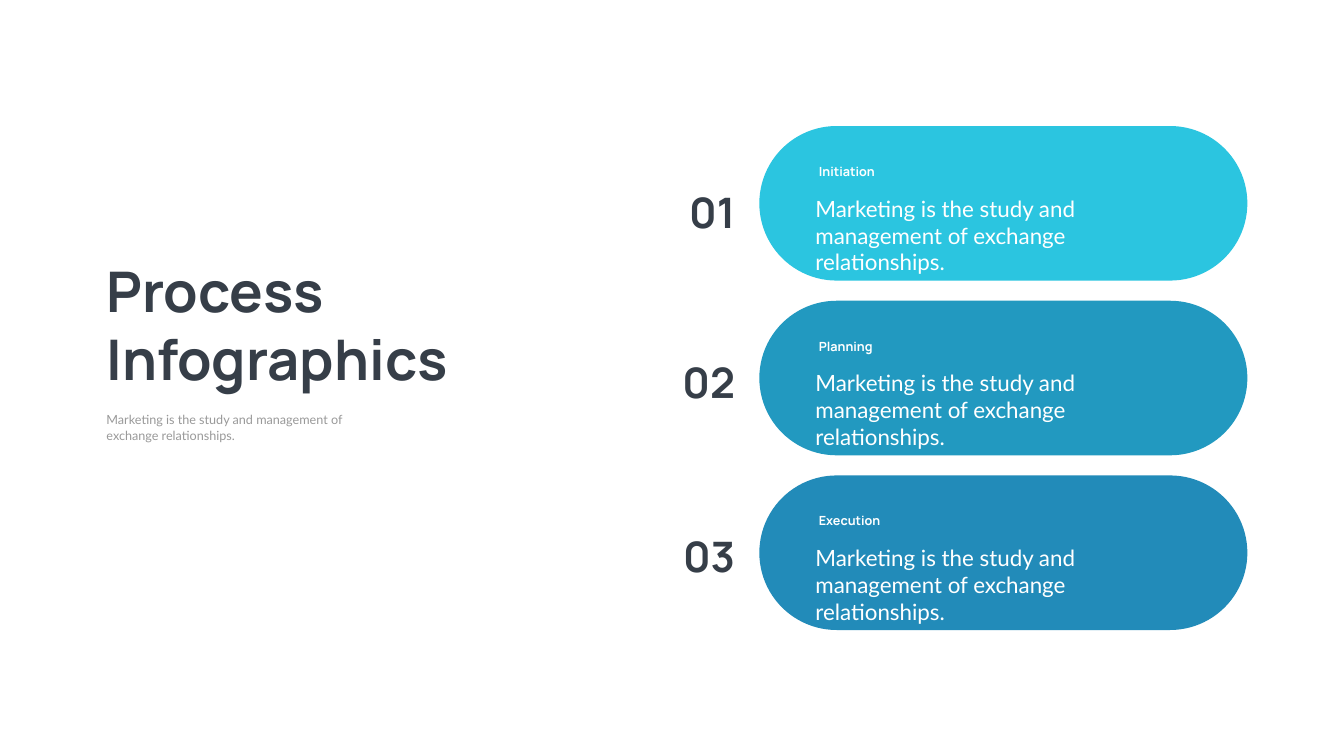
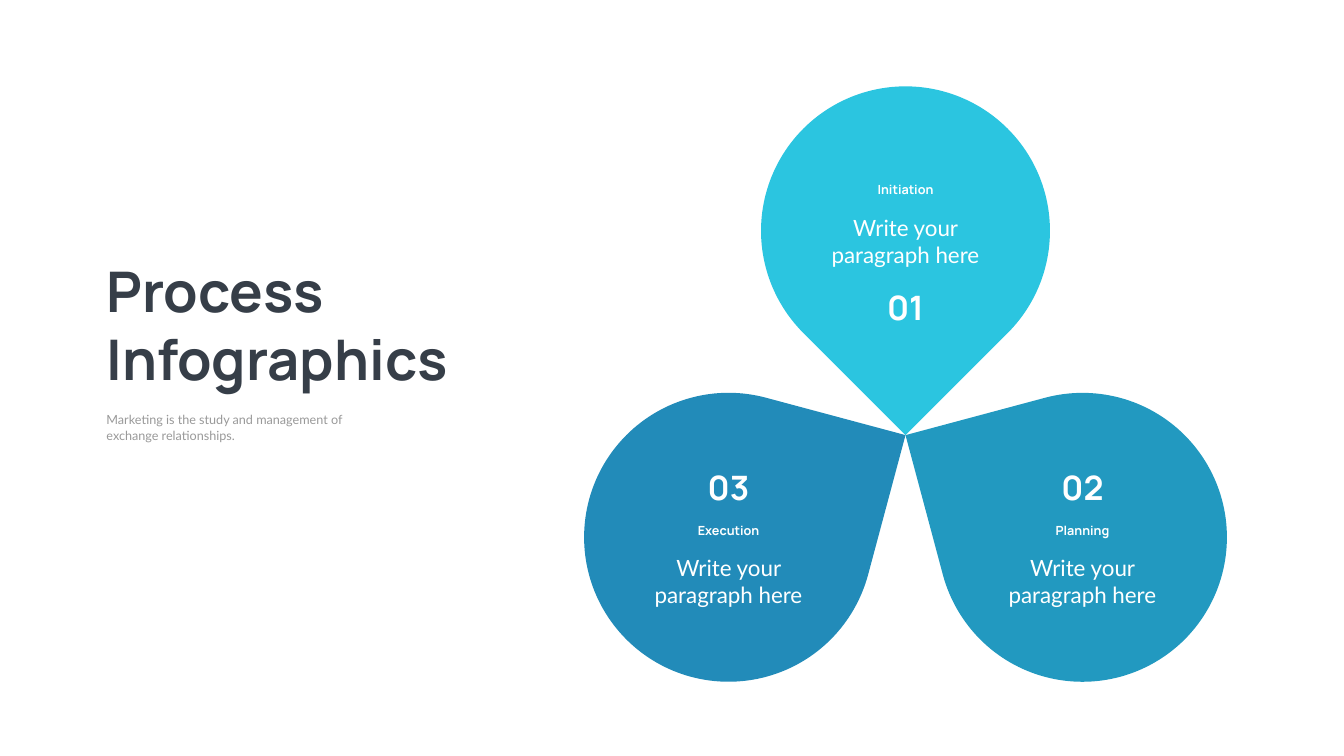
from math import cos, sin, radians, sqrt
from pptx import Presentation
from pptx.dml.color import RGBColor
from pptx.enum.shapes import MSO_SHAPE
from pptx.enum.text import MSO_ANCHOR, MSO_AUTO_SIZE, PP_ALIGN
from pptx.util import Inches, Pt

# Square grid: the slide is 160 columns by 90 rows
COLS, ROWS = 160, 90
CELL = Inches(7.5) / ROWS

HUES = {
    "ink": "363E48", "grey": "999999", "white": "FFFFFF",
    "Initiation": "2BC5E0", "Planning": "2299C0", "Execution": "228BB9",
}
STEPS = ["Initiation", "Planning", "Execution"]
PITCH = "Marketing is the study and management of exchange relationships."
LEFT, MID, RIGHT = PP_ALIGN.LEFT, PP_ALIGN.CENTER, PP_ALIGN.RIGHT

# Text styles: font, bold, size
TITLE = ("Manrope", True, 40)
LARGE = ("Manrope", True, 30)
COUNT = ("Manrope", True, 24)
HEAD = ("Manrope", True, 9)
BODY = ("Lato", False, 16)
NOTE = ("Lato", False, 9)


def grid(*cells):
    return [round(n * CELL) for n in cells]


def hue(name):
    return RGBColor.from_string(HUES[name])


def write(slide, box, lines, style, tint="white", align=LEFT):
    frame = slide.shapes.add_textbox(*grid(*box)).text_frame
    frame.word_wrap = True
    frame.auto_size = MSO_AUTO_SIZE.SHAPE_TO_FIT_TEXT
    frame.vertical_anchor = MSO_ANCHOR.TOP
    name, bold, size = style
    for i, line in enumerate(lines):
        para = frame.add_paragraph() if i else frame.paragraphs[0]
        para.alignment = align
        run = para.add_run()
        run.text = line
        font = run.font
        font.name, font.bold, font.size = name, bold, Pt(size)
        font.color.rgb = hue(tint)


def draw(slide, kind, box, tint):
    shape = slide.shapes.add_shape(kind, *grid(*box))
    shape.shadow.inherit = False
    shape.fill.solid()
    shape.fill.fore_color.rgb = hue(tint)
    shape.line.fill.background()
    return shape


def intro(slide, x, y):
    """Place the title and the note under it."""
    write(slide, (x, y, 51.6, 16.8), ["Process", "Infographics"], TITLE, "ink")
    write(slide, (x, y + 18.5, 36.5, 11.5), [PITCH], NOTE, "grey")


def pill(slide, box, num, step, drop):
    """Draw one bar; drop is how far its number sits below the bar's top."""
    x, y, wide, high = box
    bar = draw(slide, MSO_SHAPE.ROUNDED_RECTANGLE, box, step)
    bar.adjustments[0] = 0.5
    write(slide, (x + 5.9, y + 3.9, 43.1, 4.2), [step], HEAD)
    write(slide, (x + 5.5, y + 7.6, 47.5, 7.1), [PITCH], BODY)
    write(slide, (x - 13, y + drop, 11.3, 7.3), [f"{num:02}"], LARGE, "ink", RIGHT)


def stack(slide, x, y, wide, high):
    """Share the height among the bars with equal gaps."""
    bar = 18.4
    pace = (high - bar) / (len(STEPS) - 1)
    for i, (step, drop) in enumerate(zip(STEPS, (6.6, 6.1, 6))):
        pill(slide, (x, y + i * pace, wide, bar), i + 1, step, drop)


def label(slide, x, y, num, step, gap):
    """Centre a petal's text on x; gap runs from heading to number."""
    write(slide, (x - 10.1, y, 20.2, 4.2), [step], HEAD, align=MID)
    write(slide, (x - 10.1, y + 3.8, 20.2, 7.1),
          ["Write your paragraph here"], BODY, align=MID)
    write(slide, (x - 5.65, y + gap, 11.3, 5.4), [f"{num:02}"], COUNT, align=MID)


def bloom(slide, x, y, size):
    """Turn the petals around the point x, y where their tips meet."""
    reach = size / sqrt(2)
    for i, step in enumerate(STEPS):
        turn = 360 / len(STEPS) * i - 90
        mid = x + reach * cos(radians(turn))
        row = y + reach * sin(radians(turn))
        box = (mid - size / 2, row - size / 2, size, size)
        petal = draw(slide, MSO_SHAPE.TEAR, box, step)
        petal.rotation = (turn + 225) % 360
        rise, gap = (2.35, -6.6) if i else (6.4, 12.5)
        label(slide, mid, row - rise, i + 1, step, gap)


def main():
    deck = Presentation()
    deck.slide_width, deck.slide_height = grid(COLS, ROWS)
    for fill, box in ((stack, (90.4, 15, 58.1, 60)), (bloom, (107.8, 51.8, 34.4))):
        slide = deck.slides.add_slide(deck.slide_layouts[6])
        intro(slide, 11.5, 30)
        fill(slide, *box)
    deck.save("out.pptx")


if __name__ == "__main__":
    main()
